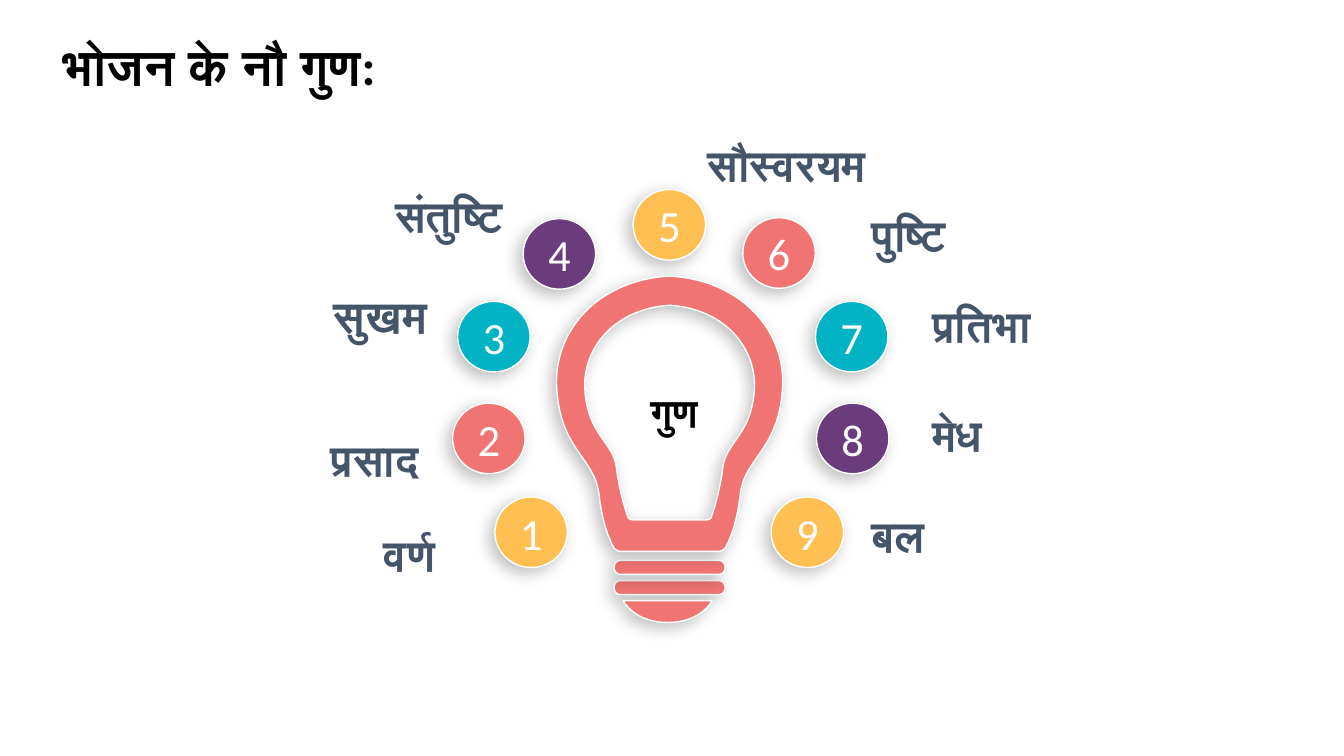
import itertools

import lxml.etree
import pptx
import pptx.dml.color
import pptx.enum.shapes
import pptx.enum.text
import pptx.oxml.ns
import pptx.util

Pt = pptx.util.Pt
qn = pptx.oxml.ns.qn
ALIGN = pptx.enum.text.PP_ALIGN
ANCHOR = pptx.enum.text.MSO_ANCHOR

CORAL, WHITE, BLACK, SLATE = "F07474", "FFFFFF", "000000", "445469"
BADGE_COLOURS = ("FFBF53", CORAL, "02B3C5", "6A3C7C")
BADGE_SIZE = (51.8, 50.4)

# Label, badge position, label position, label width, label size
QUALITIES = [
    ("वर्ण", (117.3, 256.4), (38.1, 278.7), 50, 31),
    ("प्रसाद", (87.1, 189.4), (0, 211), 109, 31),
    ("सुखम", (90.7, 116.7), (2.1, 107.3), 89, 32),
    ("संतुष्टि", (137.5, 57.6), (46, 36.8), 107, 31),
    ("सौस्वरयम", (216, 36.8), (269.2, 0), 154, 31),
    ("पुष्टि", (294.4, 56.9), (386.6, 49.7), 154, 31),
    ("प्रतिभा", (346.3, 116.7), (429.8, 115.2), 154, 31),
    ("मेध", (347, 189.4), (429.8, 193), 154, 31),
    ("बल", (314.6, 256.4), (386.6, 265), 154, 31),
]

# Half outlines: distance from the part's axis, depth below its top.
# A start point, then curves of two control points and an end point.
GLASS_OUTER = [(1.4, 0), (53.3, 3.6), (83.5, 41), (80.6, 80.6),
               (77.8, 124.6), (53.3, 129.6), (50.4, 156.2),
               (47.5, 182.2), (39.6, 194.4), (39.6, 194.4),
               (38.2, 195.8), (36.7, 196.6), (35.3, 196.6)]
GLASS_INNER = [(1.4, 20.9), (39.6, 23.8), (62.6, 51.8), (60.5, 81.4),
               (58.3, 114.5), (39.6, 118.1), (37.8, 138.2),
               (35.3, 157.7), (29.5, 172.8), (29.5, 172.8),
               (28.8, 173.5), (27.4, 174.2), (25.9, 174.2)]
BAR = [(35.3, 0), (37.7, 0), (39.7, 2.2), (39.7, 5),
       (39.7, 7.8), (37.7, 10), (35.3, 10)]
CAP = [(31.7, 0), (31.7, 0), (24, 15.5), (0, 15.5)]


def colour(value):
    return pptx.dml.color.RGBColor.from_string(value)


def points(*values):
    return [Pt(value) for value in values]


def apply_format(target, values):
    for name, value in values.items():
        setattr(target, name, value)


def write_text(shape, text, size, text_colour, bold=True, align=ALIGN.LEFT,
               anchor=ANCHOR.TOP, margins=(7.2, 3.6)):
    frame = shape.text_frame
    horizontal, vertical = points(*margins)
    apply_format(frame, {
        "word_wrap": True, "auto_size": pptx.enum.text.MSO_AUTO_SIZE.NONE,
        "vertical_anchor": anchor,
        "margin_left": horizontal, "margin_right": horizontal,
        "margin_top": vertical, "margin_bottom": vertical})
    paragraph = frame.paragraphs[0]
    paragraph.alignment = align
    run = paragraph.add_run()
    run.text = text
    apply_format(run.font, {"name": "Calibri", "size": Pt(size), "bold": bold})
    run.font.color.rgb = colour(text_colour)


def style_shape(shape, fill):
    """Give a shape its fill, white edge and soft shadow to the lower left."""
    shape.fill.solid()
    shape.fill.fore_color.rgb = colour(fill)
    shape.line.color.rgb = colour(WHITE)
    shape.line.width = Pt(1)
    shape.shadow.inherit = False
    effects = shape._element.spPr.find(qn("a:effectLst"))
    shadow = lxml.etree.SubElement(
        effects, qn("a:outerShdw"), blurRad=str(Pt(12)), dist=str(Pt(5)),
        dir=str(135 * 60000), algn="tr", rotWithShape="0")
    black = lxml.etree.SubElement(shadow, qn("a:srgbClr"), val=BLACK)
    lxml.etree.SubElement(black, qn("a:alpha"), val="26000")


def mirror_half(half):
    """Join a half outline to its mirror image as one chain of curves."""
    mirrored = [(-x, y) for x, y in reversed(half)]
    if half[-1][0] == 0:
        return half + mirrored[1:]
    return half + [half[-1], mirrored[0]] + mirrored


def bend_segments(shape):
    """Turn each three straight segments into one cubic curve."""
    for outline in shape._element.iter(qn("a:path")):
        segments = outline.findall(qn("a:lnTo"))
        for first in range(0, len(segments), 3):
            curve = lxml.etree.Element(qn("a:cubicBezTo"))
            segments[first].addprevious(curve)
            for segment in segments[first:first + 3]:
                curve.append(segment[0])
                outline.remove(segment)


def add_symmetric_outline(slide, axis, top, *halves):
    contours = [[(100 * (axis + x), 100 * (top + y)) for x, y in mirror_half(half)]
                for half in halves]
    builder = slide.shapes.build_freeform(*contours[0][0], scale=Pt(0.01))
    builder.add_line_segments(contours[0][1:], close=True)
    for hole in contours[1:]:
        hole.reverse()
        builder.move_to(*hole[0])
        builder.add_line_segments(hole[1:], close=True)
    shape = builder.convert_to_shape()
    bend_segments(shape)
    style_shape(shape, CORAL)


def add_title(slide, left, top, width, height):
    title = slide.shapes.title
    apply_format(title, dict(zip(("left", "top", "width", "height"),
                                 points(left, top, width, height))))
    write_text(title, "भोजन के नौ गुण:", 36, BLACK)


def add_bulb(slide, left, top, width):
    axis = left + width / 2
    for bar_top in (217.4, 203):
        add_symmetric_outline(slide, axis, top + bar_top, BAR)
    add_symmetric_outline(slide, axis - 1.4, top + 231.8, CAP)
    add_symmetric_outline(slide, axis, top, GLASS_OUTER, GLASS_INNER)
    caption = slide.shapes.add_textbox(*points(axis - 23.8, top + 76.3, 54, 40.3))
    write_text(caption, "गुण", 28, BLACK, align=ALIGN.CENTER)


def add_qualities(slide, left, top):
    """Place the numbered badges around the bulb, each with its label."""
    rows = zip(QUALITIES, itertools.cycle(BADGE_COLOURS))
    for number, (quality, fill) in enumerate(rows, start=1):
        label, badge_at, label_at, label_width, label_size = quality
        badge = slide.shapes.add_shape(
            pptx.enum.shapes.MSO_SHAPE.OVAL,
            *points(left + badge_at[0], top + badge_at[1], *BADGE_SIZE))
        style_shape(badge, fill)
        write_text(badge, str(number), 31.9, WHITE, bold=False,
                   align=ALIGN.CENTER, anchor=ANCHOR.MIDDLE)
        label_box = slide.shapes.add_textbox(
            *points(left + label_at[0], top + label_at[1], label_width, 38.2))
        write_text(label_box, label, label_size, SLATE, margins=(0, 0))


def main():
    presentation = pptx.Presentation()
    presentation.slide_width, presentation.slide_height = points(960, 540)
    slide = presentation.slides.add_slide(presentation.slide_layouts[5])
    add_title(slide, 37.4, 21.6, 314.6, 49)
    add_bulb(slide, 395, 197.3, 166.6)
    add_qualities(slide, 236.2, 98.6)
    presentation.save("out.pptx")


if __name__ == "__main__":
    main()
